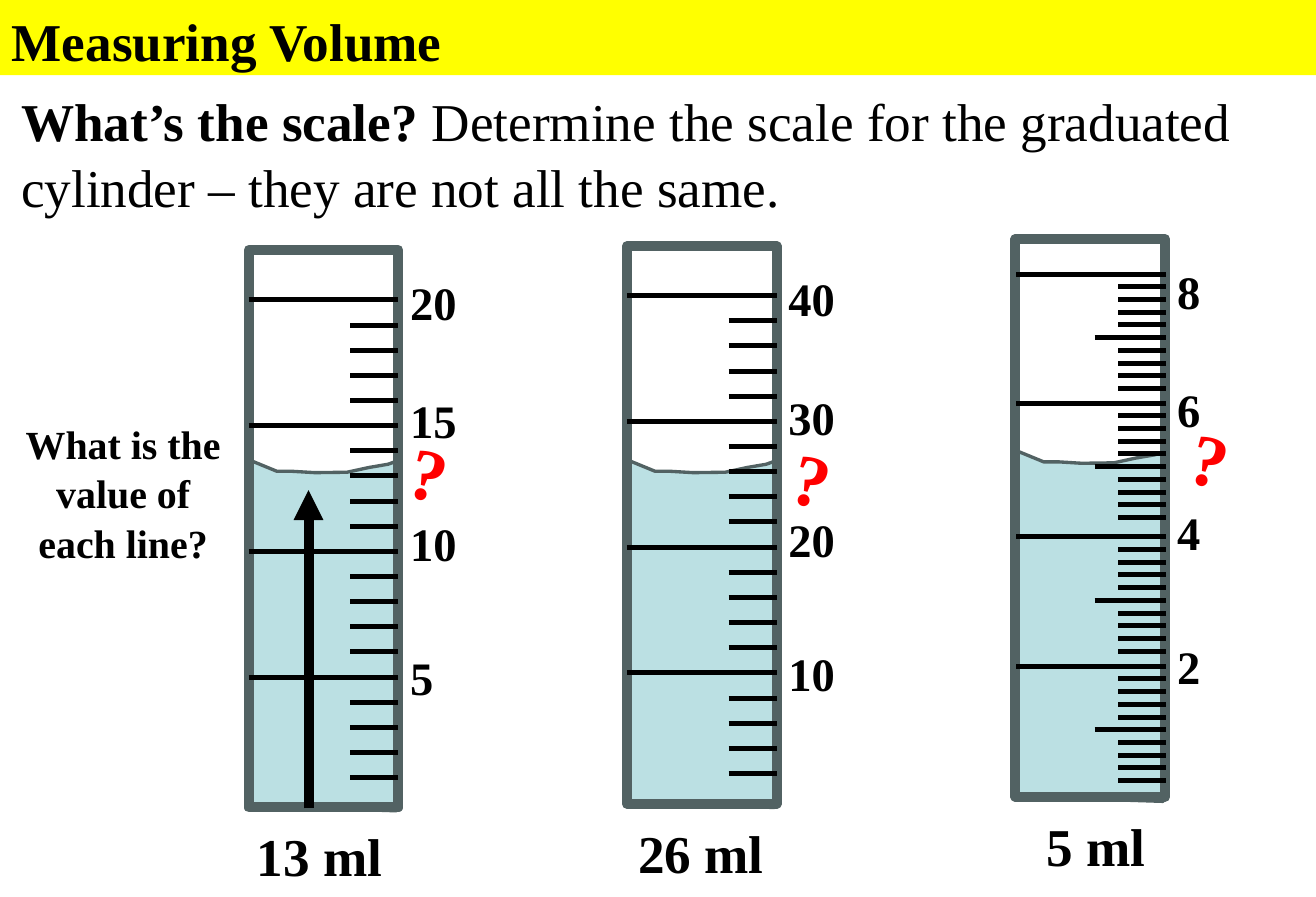
from lxml.etree import SubElement
from pptx import Presentation
from pptx.dml.color import RGBColor
from pptx.enum.shapes import MSO_CONNECTOR, MSO_SHAPE
from pptx.enum.text import MSO_ANCHOR, PP_ALIGN
from pptx.oxml.ns import qn
from pptx.util import Cm, Pt

BLACK, WHITE, YELLOW, RED = "000000", "FFFFFF", "FFFF00", "FF0000"
GLASS, WATER = "526263", "BBE0E3"
WIDTH, HEIGHT = 3.18, 11.84
MINOR, MIDDLE = 1.02, 1.52
LABEL_OFFSETS = (0.33, 2.85, 5.46, 8.3)
MENISCUS = ((0.03, 0), (0.59, 0.23), (0.91, 0.23), (1.4, 0.26), (2.08, 0.25),
            (2.54, 0.15), (2.95, 0.08), (3.12, 0.02))


def rgb(value):
    return RGBColor.from_string(value)


class Painter:
    def __init__(self, slide, font="Times New Roman"):
        self.slide = slide
        self.font = font

    def add_runs(self, sp, runs, size, color=BLACK, align=PP_ALIGN.LEFT):
        """Fill a shape with one paragraph of (text, bold) runs."""
        tf = sp.text_frame
        tf.word_wrap = True
        tf.vertical_anchor = MSO_ANCHOR.TOP
        p = tf.paragraphs[0]
        p.alignment = align
        p.line_spacing = 1.04
        for text, bold in runs:
            r = p.add_run()
            r.text = text
            r.font.name = self.font
            r.font.size = Pt(size)
            r.font.bold = bold
            r.font.color.rgb = rgb(color)

    def text(self, x, y, w, h, runs, size, color=BLACK, rotation=0):
        sp = self.slide.shapes.add_textbox(Cm(x), Cm(y), Cm(w), Cm(h))
        sp.rotation = rotation
        self.add_runs(sp, runs, size, color)

    def style(self, sp, fill=None, line=None, weight=1):
        sp.shadow.inherit = False
        if fill:
            sp.fill.solid()
            sp.fill.fore_color.rgb = rgb(fill)
        else:
            sp.fill.background()
        if line:
            sp.line.color.rgb = rgb(line)
            sp.line.width = Pt(weight)
        else:
            sp.line.fill.background()

    def box(self, x, y, w, h, fill=None, line=None, weight=1):
        sp = self.slide.shapes.add_shape(MSO_SHAPE.RECTANGLE, Cm(x), Cm(y), Cm(w), Cm(h))
        self.style(sp, fill, line, weight)
        return sp

    def caption(self, x, y, h, text, size):
        sp = self.box(x, y, 4.83, h, WHITE)
        self.add_runs(sp, [(text, True)], size, align=PP_ALIGN.CENTER)

    def line(self, x1, y1, x2, y2, weight=3, arrow=False):
        cn = self.slide.shapes.add_connector(
            MSO_CONNECTOR.STRAIGHT, Cm(x1), Cm(y1), Cm(x2), Cm(y2))
        cn.line.color.rgb = rgb(BLACK)
        cn.line.width = Pt(weight)
        sp_pr = cn._element.spPr
        if arrow:
            SubElement(sp_pr.find(qn("a:ln")), qn("a:tailEnd"), type="triangle")
        SubElement(sp_pr, qn("a:effectLst"))

    def water(self, x, y, depth):
        outline = MENISCUS + ((3.12, depth), (0, depth - 0.1))
        points = [(Cm(x + dx), Cm(y + dy)) for dx, dy in outline]
        builder = self.slide.shapes.build_freeform(*points[0])
        builder.add_line_segments(points[1:], close=True)
        self.style(builder.convert_to_shape(), WATER, GLASS, 2)

    def cylinder(self, x, top, surface, depth, labels):
        self.water(x + 0.01, surface, depth)
        self.box(x, top, WIDTH, HEIGHT, line=GLASS, weight=6)
        for label, offset in zip(labels, LABEL_OFFSETS):
            self.text(x + WIDTH, top + offset, 1.7, 1.45, [(label, True)], 28)

    def scale(self, x, majors, step, divisions):
        """Draw a full line at each major and shorter ones below it."""
        for y in majors:
            for i in range(divisions):
                if i == 0:
                    length = WIDTH
                else:
                    length = MIDDLE if 2 * i == divisions else MINOR
                self.line(x + WIDTH - length, y + i * step, x + WIDTH, y + i * step)


def main():
    prs = Presentation()
    prs.slide_width, prs.slide_height = Cm(27.94), Cm(19.05)
    s = Painter(prs.slides.add_slide(prs.slide_layouts[6]))

    s.text(0.2, 1.7, 26.92, 3, [
        ("What’s the scale? ", True),
        ("Determine the scale for the graduated cylinder – they are not all the same.", False),
    ], 32)
    title = s.box(0, 0, 27.94, 1.6, YELLOW)
    s.add_runs(title, [("Measuring Volume", True)], 32)

    s.cylinder(13.31, 5.23, 9.78, 7.37, ("40", "30", "20", "10"))
    s.scale(13.31, [6.28 + 2.67 * i for i in range(4)], 0.534, 5)
    s.cylinder(21.56, 5.08, 9.58, 7.44, ("8", "6", "4", "2"))
    s.scale(21.58, (5.82, 8.56, 11.4, 14.15), 0.27, 10)
    s.cylinder(5.28, 5.31, 9.78, 7.44, ("20", "15", "10", "5"))
    s.scale(5.28, [6.37 + 2.67 * i for i in range(4)], 0.534, 5)
    s.line(6.55, 17.17, 6.55, 10.41, 6, arrow=True)

    for x, y, answer in ((4.37, 17.3, "13 ml"), (12.47, 17.25, "26 ml"), (20.85, 17.09, "5 ml")):
        s.caption(x, y, 1.63, answer, 32)
    s.caption(0.2, 8.74, 3.33, "What is the value of each line?", 24)
    for x, y in ((8.48, 8.99), (16.61, 9.12), (25.07, 8.69)):
        s.text(x, y, 2.11, 2.13, [("?", True)], 44, RED, 14.3)

    prs.save("out.pptx")


if __name__ == "__main__":
    main()
